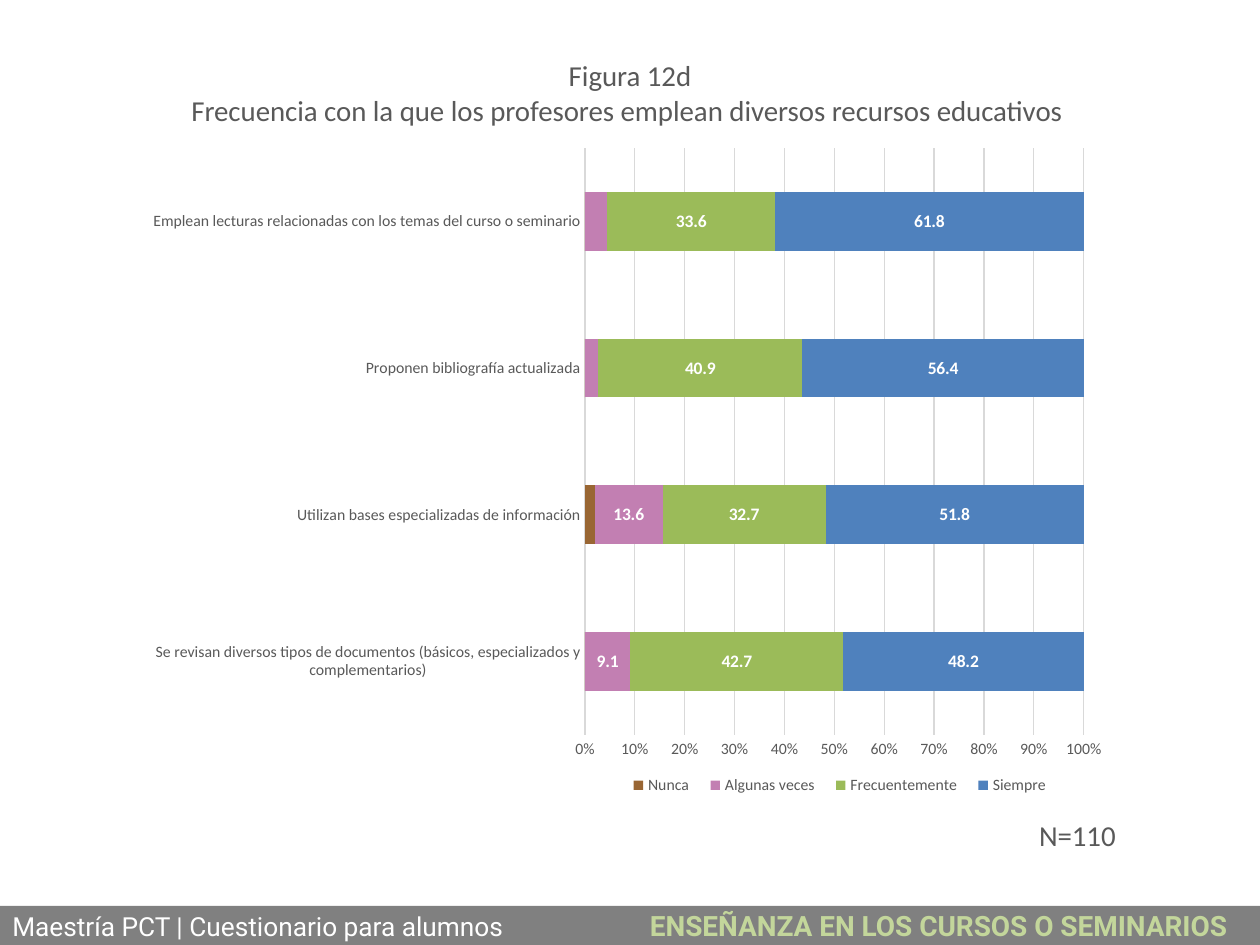
import pptx
import pptx.chart.data
import pptx.dml.color
import pptx.enum.chart
import pptx.enum.shapes
import pptx.enum.text
import pptx.oxml
import pptx.oxml.ns
import pptx.util

Inches, Pt = pptx.util.Inches, pptx.util.Pt
ALIGN = pptx.enum.text.PP_ALIGN
COLORS = {
    "text": "595959", "grid": "D9D9D9", "white": "FFFFFF",
    "band": "808080", "section": "C3D69B",
    "Nunca": "996633", "Algunas veces": "C27FB2",
    "Frecuentemente": "9BBB59", "Siempre": "4F81BD",
}


def rgb(key):
    return pptx.dml.color.RGBColor.from_string(COLORS[key])


def write(paragraph, text, size=16.5, color="text", font="Calibri", bold=False, align=ALIGN.CENTER):
    paragraph.alignment = align
    run = paragraph.add_run()
    run.text = text
    style(run.font, size, color, font, bold)


def style(face, size, color="text", font="Calibri", bold=False):
    face.size, face.name, face.bold = Pt(size), font, bold
    face.color.rgb = rgb(color)


deck = pptx.Presentation()
deck.slide_width, deck.slide_height = Inches(10), Inches(7.5)
slide = deck.slides.add_slide(deck.slide_layouts[6])

# Sample size
sample = slide.shapes.add_textbox(Inches(8.14), Inches(6.44), Inches(0.82), Inches(0.38)).text_frame
sample.word_wrap = False
write(sample.paragraphs[0], "N=110")

# Footer band, its two parts set apart by a tab stop
band = slide.shapes.add_shape(pptx.enum.shapes.MSO_SHAPE.RECTANGLE,
                              Inches(0), Inches(7.19), Inches(10), Inches(0.31))
band.shadow.inherit = False
band.fill.solid()
band.fill.fore_color.rgb = rgb("band")
band.line.fill.background()
band.text_frame.vertical_anchor = pptx.enum.text.MSO_ANCHOR.MIDDLE
footer = band.text_frame.paragraphs[0]
footer.alignment = ALIGN.LEFT
tabs = pptx.oxml.parse_xml(
    f'<a:tabLst {pptx.oxml.ns.nsdecls("a")}><a:tab pos="{Inches(5.06)}" algn="l"/></a:tabLst>')
footer._p.get_or_add_pPr().append(tabs)
write(footer, "Maestría PCT | Cuestionario para alumnos\t", size=15, color="white",
      font="Roboto", align=ALIGN.LEFT)
write(footer, "ENSEÑANZA EN LOS CURSOS O SEMINARIOS", size=16, color="section",
      font="Roboto", bold=True, align=ALIGN.LEFT)

# Chart data, categories from bottom to top
answers = pptx.chart.data.CategoryChartData(number_format="###0.0")
answers.categories = [
    "Se revisan diversos tipos de documentos (básicos, especializados y complementarios)",
    "Utilizan bases especializadas de información",
    "Proponen bibliografía actualizada",
    "Emplean lecturas relacionadas con los temas del curso o seminario",
]
for frequency, percentages in {
    "Nunca": (0, 2, 0, 0),
    "Algunas veces": (9.1, 13.6, 2.7, 4.5),
    "Frecuentemente": (42.7, 32.7, 40.9, 33.6),
    "Siempre": (48.2, 51.8, 56.4, 61.8),
}.items():
    answers.add_series(frequency, percentages)

chart = slide.shapes.add_chart(
    pptx.enum.chart.XL_CHART_TYPE.BAR_STACKED_100,
    Inches(1.06), Inches(1.07), Inches(7.84), Inches(5.35), answers).chart
chart.has_title = False
style(chart.font, 10)

# Bars and their labels; small shares stay unlabelled
bars = chart.plots[0]
bars.gap_width, bars.overlap = 150, 100
bars.vary_by_categories = False
for series in bars.series:
    series.format.fill.solid()
    series.format.fill.fore_color.rgb = rgb(series.name)
    if series.name == "Nunca":
        continue
    labels = series.data_labels
    labels.show_value = series.name != "Algunas veces"
    labels.number_format, labels.number_format_is_linked = "###0.0", False
    style(labels.font, 10, "white", bold=True)
    if not labels.show_value:
        for index, share in enumerate(series.values):
            if share > 5:
                style(series.points[index].data_label.font, 10, "white", bold=True)

# Axes
for axis in (chart.category_axis, chart.value_axis):
    axis.major_tick_mark = axis.minor_tick_mark = pptx.enum.chart.XL_TICK_MARK.NONE
    style(axis.tick_labels.font, 9)
chart.category_axis.format.line.color.rgb = rgb("grid")
chart.category_axis.format.line.width = Pt(0.75)
shares = chart.value_axis
shares.minimum_scale, shares.maximum_scale, shares.major_unit = 0, 1, 0.1
shares.tick_labels.number_format = "0%"
shares.tick_labels.number_format_is_linked = False
shares.format.line.fill.background()
shares.has_major_gridlines = True
shares.major_gridlines.format.line.color.rgb = rgb("grid")
shares.major_gridlines.format.line.width = Pt(0.75)

# Legend
chart.has_legend = True
chart.legend.position = pptx.enum.chart.XL_LEGEND_POSITION.BOTTOM
chart.legend.include_in_layout = False
style(chart.legend.font, 9)

# Plot and legend positions as fractions of the chart
plot_area = chart._chartSpace.chart.plotArea
legend = chart.legend._element
for part, place, target, (x, y, w, h) in (
    (plot_area, 0, '<c:layoutTarget val="inner"/>', (0.457, 0.02, 0.505, 0.87)),
    (legend, 1, "", (0.49, 0.94, 0.45, 0.05)),
):
    for old in part.findall(pptx.oxml.ns.qn("c:layout")):
        part.remove(old)
    part.insert(place, pptx.oxml.parse_xml(
        f'<c:layout {pptx.oxml.ns.nsdecls("c")}><c:manualLayout>{target}'
        '<c:xMode val="edge"/><c:yMode val="edge"/>'
        f'<c:x val="{x}"/><c:y val="{y}"/><c:w val="{w}"/><c:h val="{h}"/>'
        '</c:manualLayout></c:layout>'))

# Title
title = slide.shapes.add_textbox(Inches(1.26), Inches(0.41), Inches(7.48), Inches(0.66)).text_frame
title.word_wrap = False
write(title.paragraphs[0], "Figura 12d")
write(title.add_paragraph(),
      "Frecuencia con la que los profesores emplean diversos recursos educativos ")

deck.save("out.pptx")
